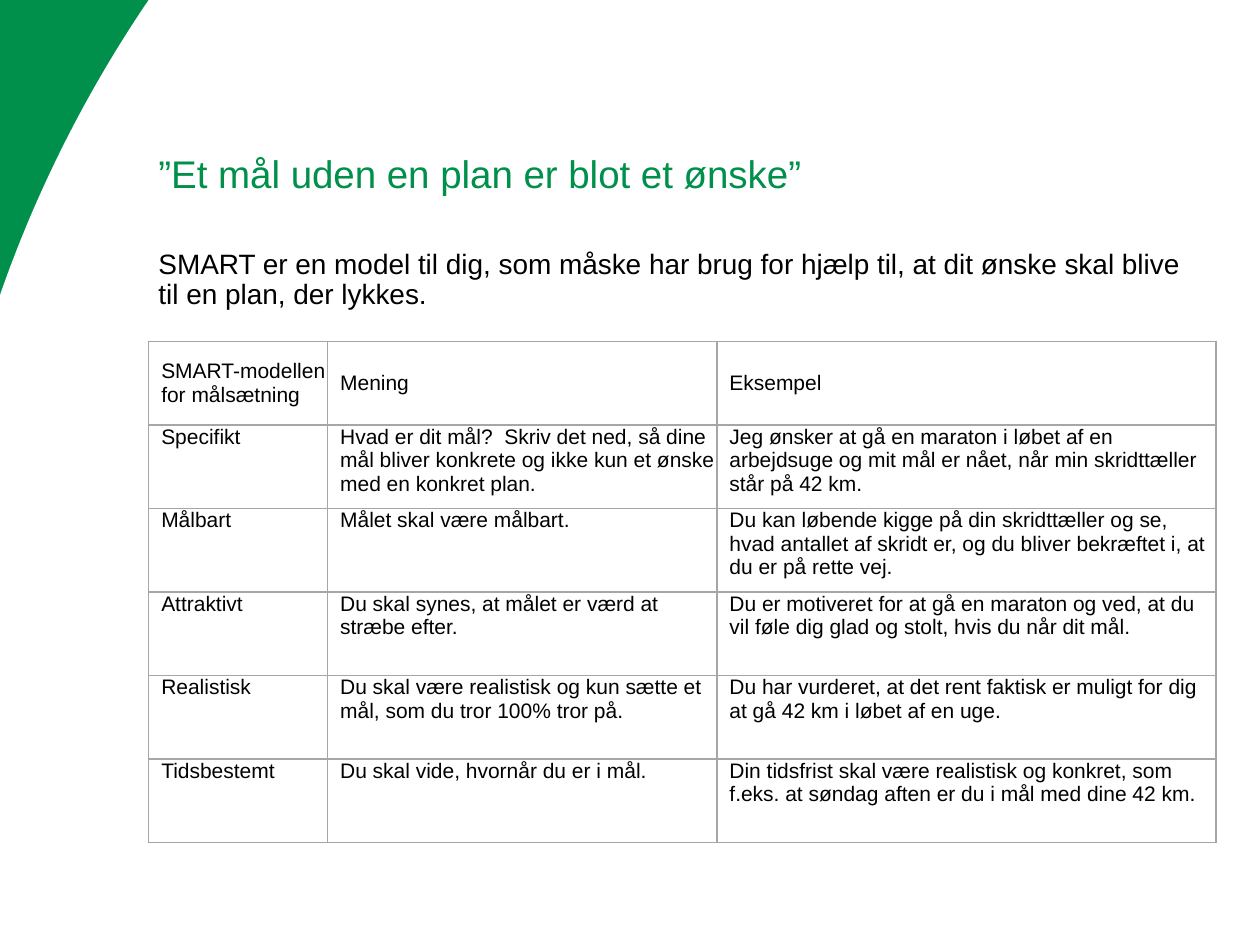
import pptx
import pptx.dml.color
import pptx.enum.shapes
import pptx.enum.text
import pptx.oxml
import pptx.oxml.ns
import pptx.util
from pptx.util import Inches

COLORS = {"green": "00904B", "white": "FFFFFF", "black": "000000", "border": "A6A6A6"}
FONT = "Arial"

COLUMN_WIDTHS = [1.42, 3.09, 3.96]
TABLE_HEIGHT = 3.98
SMART_ROWS = [
    ["SMART-modellen for målsætning", "Mening", "Eksempel"],
    ["Specifikt",
     "Hvad er dit mål?  Skriv det ned, så dine mål bliver konkrete og ikke kun et ønske "
     "med en konkret plan.",
     "Jeg ønsker at gå en maraton i løbet af en arbejdsuge og mit mål er nået, når min "
     "skridttæller står på 42 km."],
    ["Målbart",
     "Målet skal være målbart.",
     "Du kan løbende kigge på din skridttæller og se, hvad antallet af skridt er, og du "
     "bliver bekræftet i, at du er på rette vej."],
    ["Attraktivt",
     "Du skal synes, at målet er værd at stræbe efter.",
     "Du er motiveret for at gå en maraton og ved, at du vil føle dig glad og stolt, hvis "
     "du når dit mål."],
    ["Realistisk",
     "Du skal være realistisk og kun sætte et mål, som du tror 100% tror på.",
     "Du har vurderet, at det rent faktisk er muligt for dig at gå 42 km i løbet af en uge."],
    ["Tidsbestemt",
     "Du skal vide, hvornår du er i mål.",
     "Din tidsfrist skal være realistisk og konkret, som f.eks. at søndag aften er du i mål "
     "med dine 42 km."],
]


def rgb(name):
    return pptx.dml.color.RGBColor.from_string(COLORS[name])


def apply_format(target, values):
    for attribute, value in values.items():
        setattr(target, attribute, value)


def write_text(frame, text, size, color, line_spacing=1.0):
    paragraph = frame.paragraphs[0]
    paragraph.line_spacing = line_spacing
    run = paragraph.add_run()
    run.text = text
    apply_format(run.font, {"name": FONT, "size": pptx.util.Pt(size)})
    run.font.color.rgb = rgb(color)


def add_white_shape(slide, kind, box, rotation=0):
    panel = slide.shapes.add_shape(kind, *map(Inches, box))
    panel.rotation = rotation
    panel.shadow.inherit = False
    panel.fill.solid()
    panel.fill.fore_color.rgb = rgb("white")
    panel.line.fill.background()


def add_text(slide, box, text, size, color, anchor):
    frame = slide.shapes.add_textbox(*map(Inches, box)).text_frame
    apply_format(frame, {"word_wrap": True, "vertical_anchor": anchor})
    write_text(frame, text, size, color, line_spacing=0.9)


def add_borders(cell):
    properties = cell._tc.get_or_add_tcPr()
    for position, side in enumerate(("lnL", "lnR", "lnT", "lnB")):
        border = pptx.oxml.parse_xml(
            f'<a:{side} {pptx.oxml.ns.nsdecls("a")} w="{pptx.util.Pt(1)}">'
            f'<a:solidFill><a:srgbClr val="{COLORS["border"]}"/></a:solidFill></a:{side}>')
        properties.insert(position, border)


def add_smart_table(slide):
    row_count = len(SMART_ROWS)
    table = slide.shapes.add_table(
        row_count, len(COLUMN_WIDTHS), Inches(1.18), Inches(2.71),
        Inches(sum(COLUMN_WIDTHS)), Inches(TABLE_HEIGHT)).table
    apply_format(table, {"first_row": False, "horz_banding": False})
    for column, width in zip(table.columns, COLUMN_WIDTHS):
        column.width = Inches(width)

    anchors = pptx.enum.text.MSO_ANCHOR
    for row_index, texts in enumerate(SMART_ROWS):
        table.rows[row_index].height = Inches(TABLE_HEIGHT / row_count)
        for column_index, text in enumerate(texts):
            cell = table.cell(row_index, column_index)
            apply_format(cell, {
                "margin_left": Inches(0.1), "margin_right": 0,
                "margin_top": 0, "margin_bottom": 0,
                "vertical_anchor": anchors.TOP if row_index else anchors.MIDDLE,
            })
            cell.fill.background()
            add_borders(cell)
            write_text(cell.text_frame, text, 12, "black")


def main():
    presentation = pptx.Presentation()
    apply_format(presentation, {"slide_width": Inches(10), "slide_height": Inches(7.5)})
    slide = presentation.slides.add_slide(presentation.slide_layouts[6])

    # Green background, curved white page
    slide.background.fill.solid()
    slide.background.fill.fore_color.rgb = rgb("green")
    shapes = pptx.enum.shapes.MSO_SHAPE
    add_white_shape(slide, shapes.OVAL, (0.04, -3.97, 10.51, 14.6), rotation=29)
    add_white_shape(slide, shapes.RECTANGLE, (8.54, 5.01, 1.46, 2.49))

    # Title, table and introduction
    anchors = pptx.enum.text.MSO_ANCHOR
    add_text(slide, (1.16, 0.92, 7.86, 0.96),
             "”Et mål uden en plan er blot et ønske”", 22, "green", anchors.MIDDLE)
    add_smart_table(slide)
    add_text(slide, (1.16, 1.94, 8.43, 1.33),
             "SMART er en model til dig, som måske har brug for hjælp til, at dit ønske "
             "skal blive til en plan, der lykkes.", 16, "black", anchors.TOP)

    presentation.save("out.pptx")


if __name__ == "__main__":
    main()
